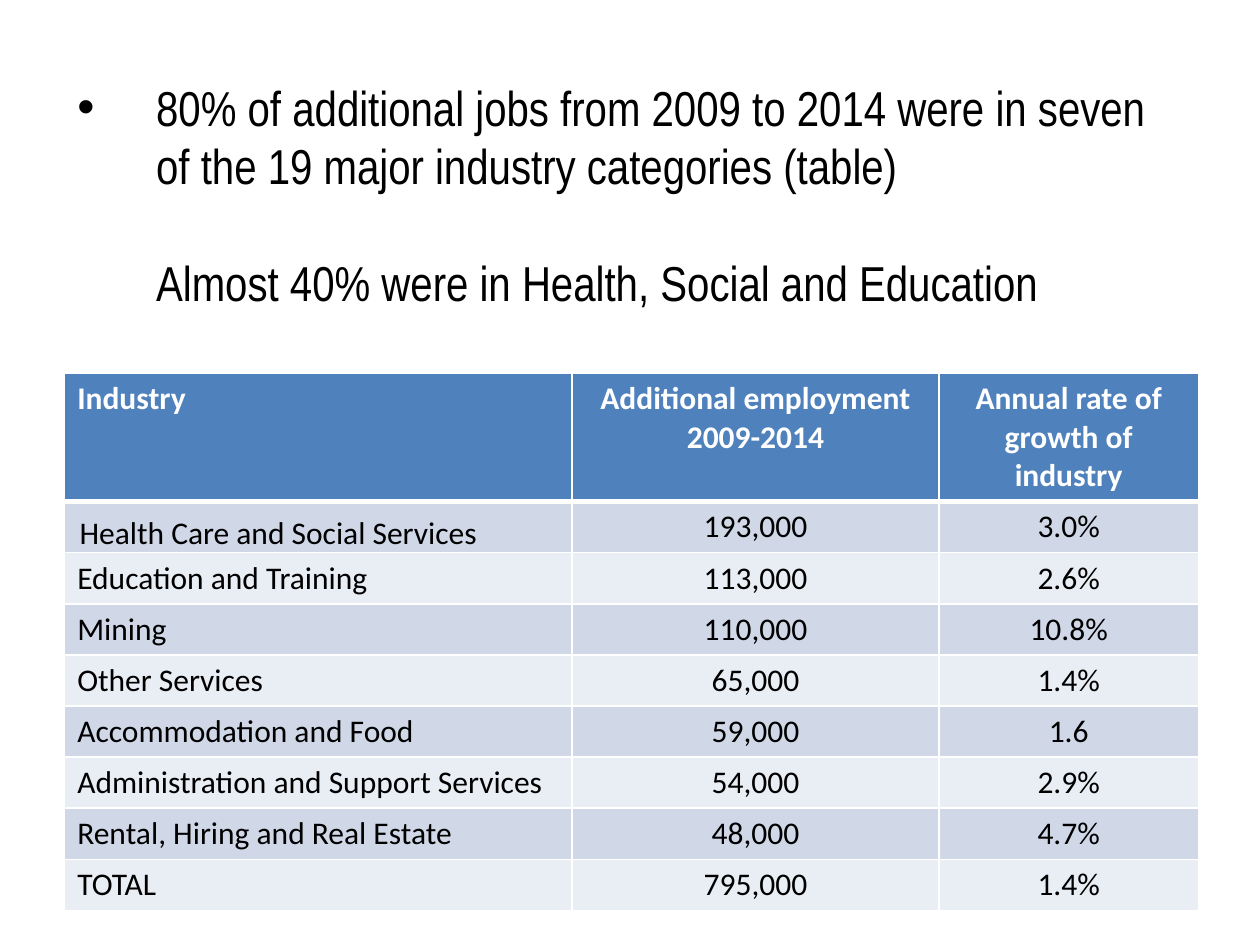
from lxml.etree import SubElement
from pptx import Presentation
from pptx.dml.color import RGBColor
from pptx.enum.text import MSO_ANCHOR, MSO_AUTO_SIZE, PP_ALIGN
from pptx.oxml.ns import qn
from pptx.util import Pt


def set_font(font, color, **formats):
    for name, value in formats.items():
        setattr(font, name, value)
    font.color.rgb = RGBColor.from_string(color)


def add_border(cell, side, color, width):
    line = SubElement(cell._tc.get_or_add_tcPr(), qn(f"a:{side}"), w=str(Pt(width)))
    fill = SubElement(line, qn("a:solidFill"))
    SubElement(fill, qn("a:srgbClr"), val=color)


deck = Presentation()
deck.slide_width, deck.slide_height = Pt(720), Pt(540)
page = deck.slides.add_slide(deck.slide_layouts[5])

# Title: a bulleted statement and an indented follow-up
title = page.shapes.title
title.left, title.top, title.width, title.height = Pt(37), Pt(32), Pt(648), Pt(158)
frame = title.text_frame
frame.text = (
    "80% of additional jobs from 2009 to 2014 were in seven of the 19 major industry categories (table)\n"
    "Almost 40% were in Health, Social and Education"
)
title_formats = {"word_wrap": True, "auto_size": MSO_AUTO_SIZE.NONE, "vertical_anchor": MSO_ANCHOR.MIDDLE}
for name, value in title_formats.items():
    setattr(frame, name, value)
for para, indent, gap in zip(frame.paragraphs, (-45, 0), (0, 33)):
    para.alignment = PP_ALIGN.LEFT
    para.space_before = Pt(gap)
    set_font(para.runs[0].font, "000000", name="Arial Narrow", size=Pt(28))
    properties = para._p.get_or_add_pPr()
    properties.set("marL", str(Pt(45)))
    properties.set("indent", str(Pt(indent)))
    if indent:
        SubElement(properties, qn("a:buFont"), typeface="Arial")
        SubElement(properties, qn("a:buChar"), char="•")

# Employment table
rows = [
    ("Industry", "Additional employment\n2009-2014", "Annual rate of growth of industry"),
    ("Health Care and Social Services", "193,000", "3.0%"),
    ("Education and Training", "113,000", "2.6%"),
    ("Mining", "110,000", "10.8%"),
    ("Other Services", "65,000", "1.4%"),
    ("Accommodation and Food", "59,000", "1.6"),
    ("Administration and Support Services", "54,000", "2.9%"),
    ("Rental, Hiring and Real Estate", "48,000", "4.7%"),
    ("TOTAL", "795,000", "1.4%"),
]
widths = (290, 209.5, 148.5)
header_height, row_height = 72, 29.2
height = header_height + row_height * (len(rows) - 1)
table = page.shapes.add_table(len(rows), len(widths), Pt(37), Pt(213.5), Pt(sum(widths)), Pt(height)).table
for column, width in zip(table.columns, widths):
    column.width = Pt(width)

for row_index, row in enumerate(rows):
    header = row_index == 0
    table.rows[row_index].height = Pt(header_height if header else row_height)
    band = "4F81BD" if header else ("E9EDF4", "D0D8E8")[row_index % 2]
    for column_index, text in enumerate(row):
        cell = table.cell(row_index, column_index)
        cell.text = text
        for side in ("lnL", "lnR", "lnT", "lnB"):
            heavy = (header and side == "lnB") or (row_index == 1 and side == "lnT")
            add_border(cell, side, "FFFFFF", 3 if heavy else 1)
        cell.fill.solid()
        cell.fill.fore_color.rgb = RGBColor.from_string(band)
        for para in cell.text_frame.paragraphs:
            para.alignment = PP_ALIGN.CENTER if column_index else PP_ALIGN.LEFT
            set_font(para.runs[0].font, "FFFFFF" if header else "000000",
                     name="Calibri", size=Pt(18), bold=header)

# The first industry sits at the bottom of its cell
health_formats = {"vertical_anchor": MSO_ANCHOR.BOTTOM, "margin_left": Pt(8.5),
                  "margin_right": Pt(0.7), "margin_top": Pt(0.7), "margin_bottom": Pt(0)}
for name, value in health_formats.items():
    setattr(table.cell(1, 0), name, value)

deck.save("out.pptx")
